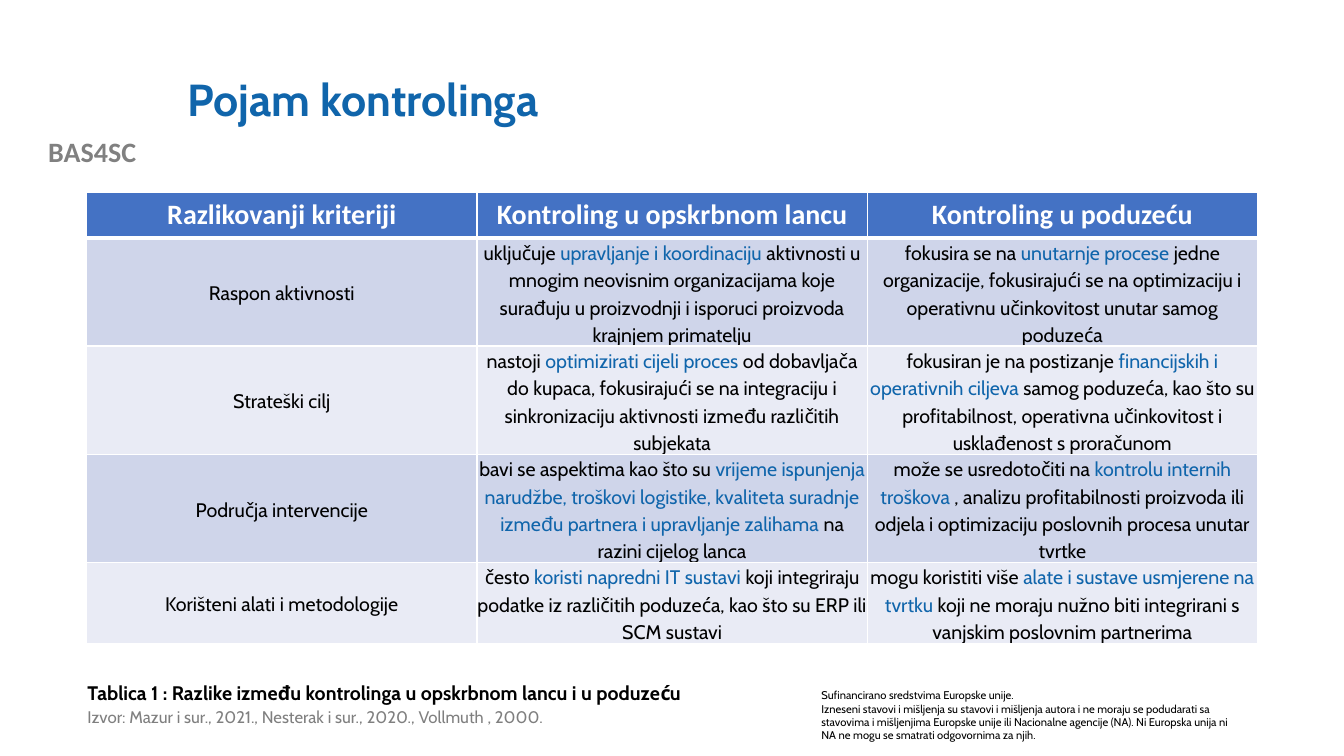
from lxml import etree
from pptx import Presentation
from pptx.dml.color import RGBColor
from pptx.enum.text import MSO_ANCHOR, PP_ALIGN
from pptx.oxml.ns import qn
from pptx.util import Pt

CENTER, LEFT = PP_ALIGN.CENTER, PP_ALIGN.LEFT
TOP, MIDDLE = MSO_ANCHOR.TOP, MSO_ANCHOR.MIDDLE

BLACK = RGBColor(0x00, 0x00, 0x00)
WHITE = RGBColor(0xFF, 0xFF, 0xFF)
BLUE = RGBColor(0x10, 0x65, 0xAB)
GRAY = RGBColor(0x80, 0x80, 0x80)
SOURCE_GRAY = RGBColor(0x7F, 0x7F, 0x7F)
HEADER_FILL = RGBColor(0x44, 0x72, 0xC4)
BAND_FILLS = [RGBColor(0xCF, 0xD5, 0xEA), RGBColor(0xE9, 0xEB, 0xF5)]


def add_span(para, text, font, size, color, bold=False):
    span = para.add_run()
    span.text = text
    values = {"name": font, "size": Pt(size), "bold": bold}
    for name, value in values.items():
        setattr(span.font, name, value)
    span.font.color.rgb = color


def add_borders(cell, top, bottom):
    """Draw white cell borders; top and bottom are widths in points."""
    properties = cell._tc.get_or_add_tcPr()
    for side, width in {"L": 1, "R": 1, "T": top, "B": bottom}.items():
        line = etree.SubElement(properties, qn(f"a:ln{side}"), w=str(Pt(width)))
        fill = etree.SubElement(line, qn("a:solidFill"))
        etree.SubElement(fill, qn("a:srgbClr"), val=str(WHITE))


deck = Presentation()
deck.slide_width, deck.slide_height = Pt(960), Pt(540)
page = deck.slides.add_slide(deck.slide_layouts[6])

# Text boxes: place, paragraphs, font format, paragraph format, anchor
text_boxes = [
    ((0, 92.2, 131.8, 31.7), ["BAS4SC"],
     ("Calibri", 20, GRAY, True), {"alignment": CENTER}, TOP),
    ((579.6, 488.2, 314.6, 46.1),
     ["Sufinancirano sredstvima Europske unije.",
      "Izneseni stavovi i mišljenja su stavovi i mišljenja autora i ne moraju se "
      "podudarati sa stavovima i mišljenjima Europske unije ili Nacionalne agencije "
      "(NA). Ni Europska unija ni NA ne mogu se smatrati odgovornima za njih."],
     ("Cabin", 8, BLACK), {"alignment": LEFT}, TOP),
    ((126.7, 28.8, 767.5, 87.8), ["Pojam kontrolinga"],
     ("Cabin", 32, BLUE, True), {"line_spacing": 0.9}, MIDDLE),
    ((55.4, 504, 416.2, 18.7),
     ["Izvor: Mazur i sur., 2021., Nesterak i sur., 2020., Vollmuth , 2000."],
     ("Cabin", 12, SOURCE_GRAY), {"line_spacing": 0.8}, TOP),
    ((55.4, 483.1, 785.5, 24.5),
     ["Tablica 1 : Razlike između kontrolinga u opskrbnom lancu i u poduzeću"],
     ("Cabin", 14, BLACK, True), {"alignment": LEFT}, TOP),
]
for place, texts, font_format, para_format, anchor in text_boxes:
    box = page.shapes.add_textbox(*map(Pt, place))
    frame = box.text_frame
    frame.word_wrap = True
    frame.vertical_anchor = anchor
    for index, text in enumerate(texts):
        para = frame.paragraphs[0] if index == 0 else frame.add_paragraph()
        for name, value in para_format.items():
            setattr(para, name, value)
        add_span(para, text, *font_format)

# Comparison table: the middle span of each three-part cell is highlighted
headers = ["Razlikovanji kriteriji", "Kontroling u opskrbnom lancu", "Kontroling u poduzeću"]
criteria = [
    [["Raspon aktivnosti"],
     ["uključuje ", "upravljanje i koordinaciju ",
      "aktivnosti u mnogim neovisnim organizacijama koje surađuju u proizvodnji i "
      "isporuci proizvoda krajnjem primatelju"],
     ["fokusira se na ", "unutarnje procese ",
      "jedne organizacije, fokusirajući se na optimizaciju i operativnu učinkovitost "
      "unutar samog poduzeća"]],
    [["Strateški cilj"],
     ["nastoji ", "optimizirati cijeli proces ",
      "od dobavljača do kupaca, fokusirajući se na integraciju i sinkronizaciju "
      "aktivnosti između različitih subjekata"],
     ["fokusiran je na postizanje ", "financijskih i operativnih ciljeva ",
      "samog poduzeća, kao što su profitabilnost, operativna učinkovitost i "
      "usklađenost s proračunom"]],
    [["Područja intervencije"],
     ["bavi se aspektima kao što su ",
      "vrijeme ispunjenja narudžbe, troškovi logistike, kvaliteta suradnje između "
      "partnera i upravljanje zalihama ",
      "na razini cijelog lanca"],
     ["može se usredotočiti na ", "kontrolu internih troškova ",
      ", analizu profitabilnosti proizvoda ili odjela i optimizaciju poslovnih "
      "procesa unutar tvrtke"]],
    [["Korišteni alati i metodologije"],
     ["često ", "koristi napredni IT sustavi ",
      "koji integriraju podatke iz različitih poduzeća, kao što su ERP ili SCM sustavi"],
     ["mogu koristiti više ", "alate i sustave usmjerene na tvrtku ",
      "koji ne moraju nužno biti integrirani s vanjskim poslovnim partnerima"]],
]
row_heights = [32.4, 72, 72, 72, 53.3]
table = page.shapes.add_table(
    len(row_heights), len(headers), Pt(61.9), Pt(137.5), Pt(836.4), Pt(sum(row_heights))
).table
for row, height in zip(table.rows, row_heights):
    row.height = Pt(height)
for column in table.columns:
    column.width = Pt(278.8)

for column_index, header in enumerate(headers):
    cell = table.cell(0, column_index)
    add_borders(cell, top=1, bottom=3)
    cell.fill.solid()
    cell.fill.fore_color.rgb = HEADER_FILL
    para = cell.text_frame.paragraphs[0]
    para.alignment = CENTER
    add_span(para, header, "Calibri", 20, WHITE, True)

body_para_format = {"alignment": CENTER, "line_spacing": 1.15, "space_after": Pt(6)}
for row_index, criterion in enumerate(criteria, start=1):
    for column_index, parts in enumerate(criterion):
        cell = table.cell(row_index, column_index)
        add_borders(cell, top=3 if row_index == 1 else 1, bottom=1)
        cell.fill.solid()
        cell.fill.fore_color.rgb = BAND_FILLS[(row_index - 1) % 2]
        cell.vertical_anchor = MIDDLE
        for side in ("left", "right", "top", "bottom"):
            setattr(cell, f"margin_{side}", 0)
        para = cell.text_frame.paragraphs[0]
        for name, value in body_para_format.items():
            setattr(para, name, value)
        for part_index, part in enumerate(parts):
            add_span(para, part, "Cabin", 14, BLUE if part_index == 1 else BLACK)

deck.save("out.pptx")
